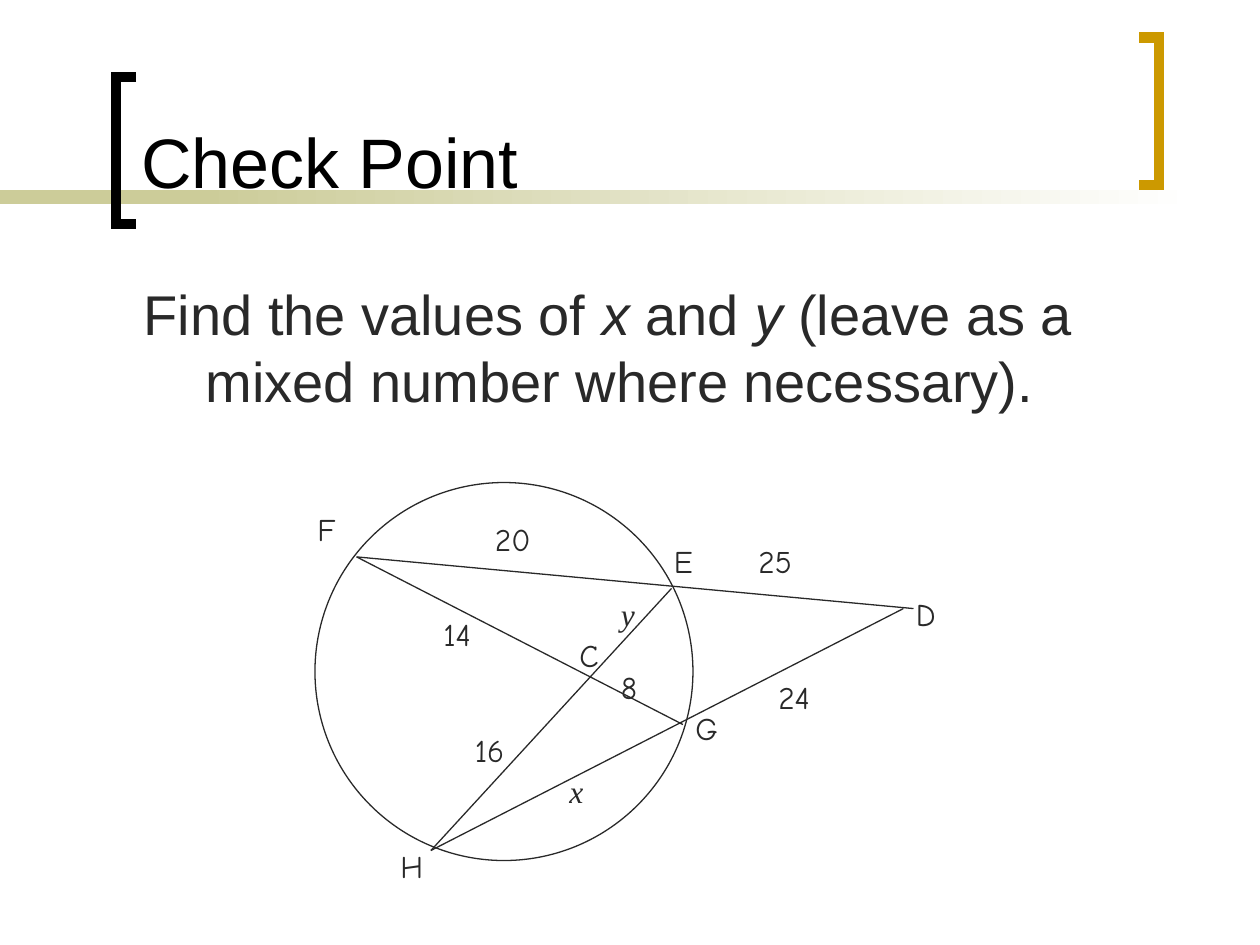
"""Build the Check Point slide on chords and secants of a circle."""
import pptx
import pptx.dml.color
import pptx.enum.shapes
import pptx.enum.text
import pptx.oxml.ns
import pptx.util
from lxml import etree
from pptx.util import Inches

INK = "292929"
BAND = "CCCC99"


def color(value):
    return pptx.dml.color.RGBColor.from_string(value)


def write(paragraph, runs, formats):
    for text, italic in runs:
        run = paragraph.add_run()
        run.text = text
        run.font.italic = italic
        run.font.color.rgb = color(formats["color"])
        for name in ("name", "size"):
            setattr(run.font, name, formats[name])


presentation = pptx.Presentation()
presentation.slide_width = Inches(10)
presentation.slide_height = Inches(7.5)
slide = presentation.slides.add_slide(presentation.slide_layouts[1])
shapes = slide.shapes
qn = pptx.oxml.ns.qn

for left, width, end_color in [(0, 2.33, BAND), (1.58, 7.92, "FFFFFF")]:
    band = shapes.add_shape(pptx.enum.shapes.MSO_SHAPE.RECTANGLE,
                            Inches(left), Inches(1.51), Inches(width), Inches(0.11))
    band.shadow.inherit = False
    band.line.fill.background()
    band.fill.gradient()
    band.fill.gradient_angle = 0
    for stop, stop_color in zip(band.fill.gradient_stops, (BAND, end_color)):
        stop.color.rgb = color(stop_color)

for inner, outer, top, bracket_color in [(1.08, 0.92, 0.61, "000000"),
                                         (9.04, 9.2, 0.3, "CC9900")]:
    bottom = top + 1.17
    builder = shapes.build_freeform(Inches(inner), Inches(top))
    corners = [(outer, top), (outer, bottom), (inner, bottom)]
    builder.add_line_segments([(Inches(x), Inches(y)) for x, y in corners], close=False)
    bracket = builder.convert_to_shape()
    bracket.shadow.inherit = False
    bracket.fill.background()
    bracket.line.color.rgb = color(bracket_color)
    bracket.line.width = pptx.util.Pt(6)
    outline = bracket.element.spPr.find(qn("a:ln"))
    etree.SubElement(outline, qn("a:miter"), lim="800000")

title, body = shapes.title, slide.placeholders[1]
placeholders = [
    (title, (1.02, 0.11, 7.83, 1.55), pptx.enum.text.MSO_ANCHOR.BOTTOM,
     [("Check Point", False)],
     {"name": "Arial", "size": pptx.util.Pt(40), "color": "000000"}),
    (body, (1.04, 2.17, 8.38, 4.5), pptx.enum.text.MSO_ANCHOR.TOP,
     [("Find the values of ", False), ("x", True), (" and ", False), ("y", True),
      (" (leave as a mixed number where necessary).", False)],
     {"name": "Arial", "size": pptx.util.Pt(32), "color": INK}),
]
for placeholder, box, anchor, runs, formats in placeholders:
    placeholder.element.getparent().append(placeholder.element)
    for name, value in zip(("left", "top", "width", "height"), box):
        setattr(placeholder, name, Inches(value))
    frame = placeholder.text_frame
    frame.auto_size = pptx.enum.text.MSO_AUTO_SIZE.NONE
    frame.vertical_anchor = anchor
    paragraph = frame.paragraphs[0]
    paragraph.alignment = pptx.enum.text.PP_ALIGN.LEFT
    write(paragraph, runs, formats)

properties = body.text_frame.paragraphs[0]._p.get_or_add_pPr()
properties.set("marL", str(Inches(0.49)))
properties.set("indent", str(Inches(-0.49)))
etree.SubElement(properties, qn("a:buNone"))

circle = shapes.add_shape(pptx.enum.shapes.MSO_SHAPE.OVAL,
                          Inches(2.5), Inches(3.83), Inches(3), Inches(3))
circle.shadow.inherit = False
circle.fill.background()
circle.line.color.rgb = color(INK)
circle.line.width = pptx.util.Pt(0.75)

segments = [
    (7.25, 4.83, 2.83, 4.42),
    (3.42, 6.75, 7.17, 4.83),
    (2.83, 4.42, 5.42, 5.75),
    (5.33, 4.67, 3.42, 6.75),
]
for segment in segments:
    connector = shapes.add_connector(pptx.enum.shapes.MSO_CONNECTOR.STRAIGHT,
                                     *[Inches(value) for value in segment])
    connector.line.color.rgb = color(INK)
    connector.line.width = pptx.util.Pt(0.75)
    etree.SubElement(connector.element.spPr, qn("a:effectLst"))

labels = [
    ("E", 5.25, 4.25), ("F", 2.42, 4), ("G", 5.42, 5.58), ("D", 7.17, 4.67),
    ("H", 3.08, 6.67), ("C", 4.5, 5), ("20", 3.83, 4.08), ("25", 5.92, 4.25),
    ("24", 6.08, 5.33), ("14", 3.42, 4.83), ("16", 3.67, 5.75), ("8", 4.83, 5.25),
    ("x", 4.42, 6.08), ("y", 4.83, 4.67),
]
for text, left, top in labels:
    unknown = text in "xy"
    label = shapes.add_textbox(Inches(left), Inches(top), Inches(0.67), Inches(0.4))
    label.text_frame.word_wrap = True
    label.text_frame.auto_size = pptx.enum.text.MSO_AUTO_SIZE.SHAPE_TO_FIT_TEXT
    write(label.text_frame.paragraphs[0], [(text, unknown)],
          {"name": "Times New Roman" if unknown else "Comic Neue",
           "size": pptx.util.Pt(18), "color": INK})

presentation.save("out.pptx")
